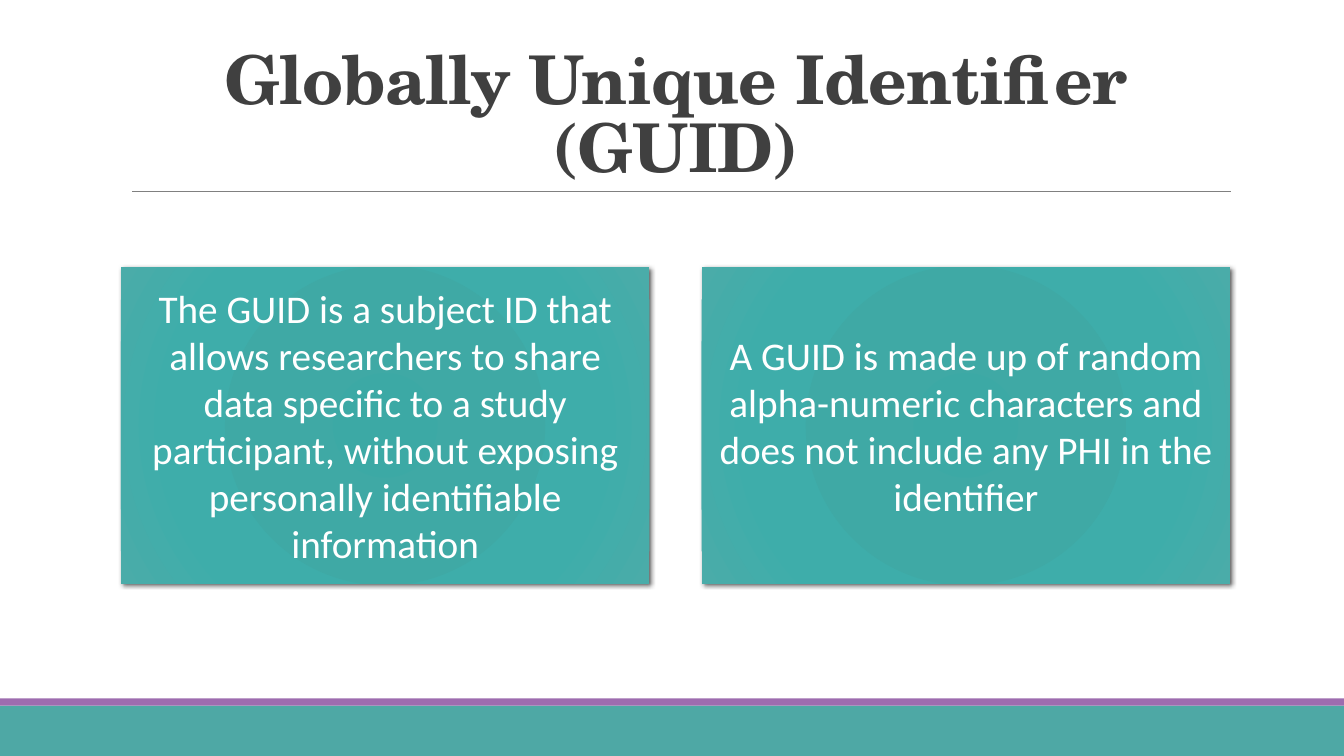
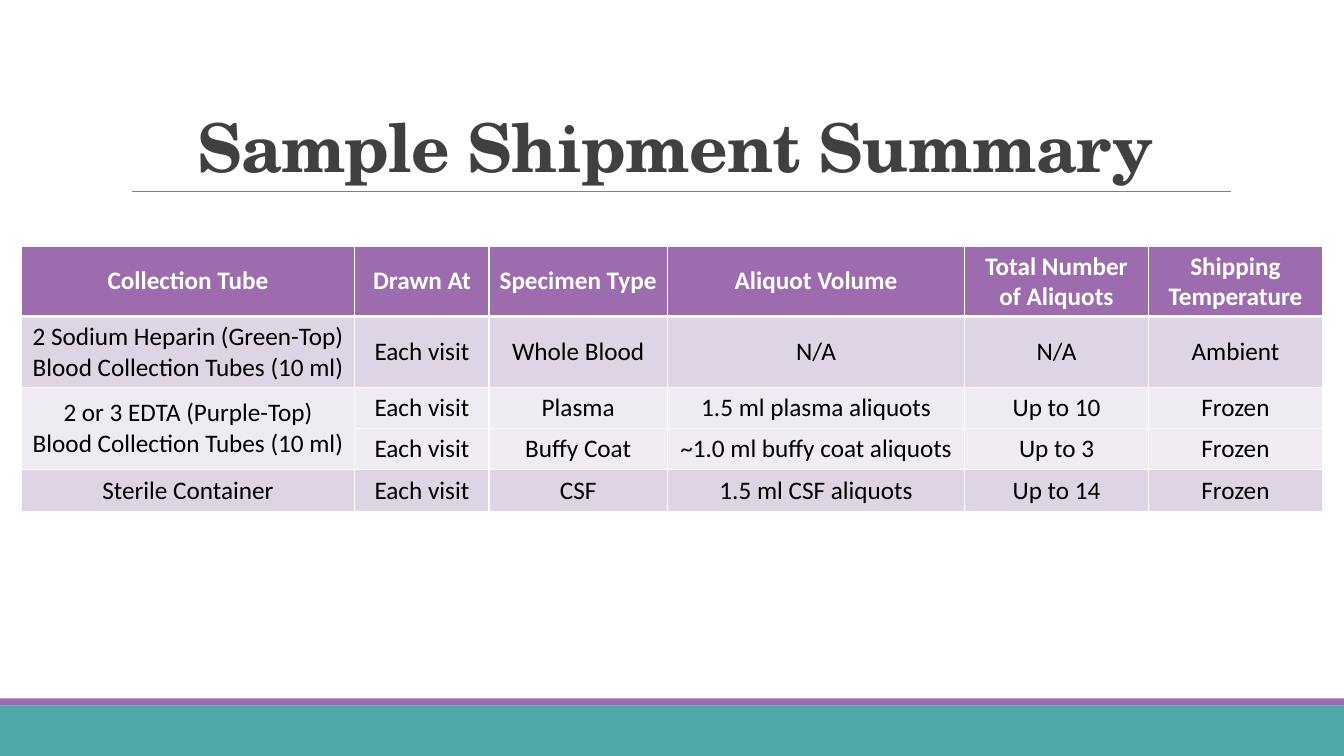
from dataclasses import dataclass
from typing import NamedTuple

from lxml.etree import SubElement
from pptx import Presentation
from pptx.dml.color import RGBColor
from pptx.enum.shapes import MSO_CONNECTOR, MSO_SHAPE
from pptx.enum.text import MSO_ANCHOR, PP_ALIGN
from pptx.oxml import parse_xml
from pptx.oxml.ns import nsdecls, qn
from pptx.shapes.autoshape import Shape
from pptx.slide import Slide
from pptx.table import _Cell as Cell
from pptx.text.text import TextFrame
from pptx.util import Inches, Pt


class TextStyle(NamedTuple):
    font: str
    size: float
    color: str
    bold: bool = False
    tracking: float = 0
    line_spacing: float = 1.0


@dataclass(frozen=True)
class Theme:
    teal: str = "4EA8A5"
    purple: str = "9D6CAF"
    white: str = "FFFFFF"
    rule: str = "808080"
    row_dark: str = "DFD4E3"
    row_light: str = "EFEBF2"
    row_pale: str = "F1EBF4"
    shadow: str = "000000"
    card_stops: tuple[tuple[int, str], ...] = (
        (0, "3CA9A5"), (34, "3FA9A5"), (70, "3EADAA"), (100, "4AACA9"))
    title: TextStyle = TextStyle("TeX Gyre Schola", 48, "404040", True, -0.5, 0.85)
    card: TextStyle = TextStyle("Calibri", 28, "FFFFFF")
    header: TextStyle = TextStyle("Calibri", 18, "FFFFFF", True)
    body: TextStyle = TextStyle("Calibri", 18, "000000")


THEME = Theme()
SLIDE_WIDTH, SLIDE_HEIGHT = 13.33, 7.5


class Box(NamedTuple):
    left: float
    top: float
    width: float
    height: float

    def lengths(self) -> tuple[Inches, ...]:
        return tuple(Inches(value) for value in self)


class TableRow(NamedTuple):
    height: float
    fill: str
    texts: tuple[str, ...]


TITLE_BOX = Box(1.2, 0.31, 11, 1.59)
BANDS = (
    (Box(0, 7, SLIDE_WIDTH, 0.5), THEME.teal),
    (Box(0, 6.93, SLIDE_WIDTH, 0.07), THEME.purple),
)

CARD_TEXTS = (
    "The GUID is a subject ID that allows researchers to share data specific to a "
    "study participant, without exposing personally identifiable information",
    "A GUID is made up of random alpha-numeric characters and does not include any "
    "PHI in the identifier",
)
FIRST_CARD = Box(1.2, 2.65, 5.24, 3.14)
CARD_GAP = 0.52
CARD_INSET = 0.12

TABLE_LEFT, TABLE_TOP = 0.21, 2.44
COLUMN_WIDTHS = (3.31, 1.33, 1.77, 2.95, 1.82, 1.73)
TALL, SHORT = 0.7, 0.41
TABLE_ROWS = (
    TableRow(TALL, THEME.purple, (
        "Collection Tube", "Drawn At", "Specimen Type", "Aliquot Volume",
        "Total Number of Aliquots", "Shipping Temperature")),
    TableRow(TALL, THEME.row_dark, (
        "2 Sodium Heparin (Green-Top) Blood Collection Tubes (10 ml)",
        "Each visit", "Whole Blood", "N/A", "N/A", "Ambient")),
    TableRow(SHORT, THEME.row_light, (
        "2 or 3 EDTA (Purple-Top) Blood Collection Tubes (10 ml)",
        "Each visit", "Plasma", "1.5 ml plasma aliquots", "Up to 10", "Frozen")),
    TableRow(SHORT, THEME.row_pale, (
        "", "Each visit", "Buffy Coat", "~1.0 ml buffy coat aliquots", "Up to 3", "Frozen")),
    TableRow(SHORT, THEME.row_dark, (
        "Sterile Container", "Each visit", "CSF", "1.5 ml CSF aliquots", "Up to 14", "Frozen")),
)


def write_text(frame: TextFrame, text: str, style: TextStyle) -> None:
    frame.word_wrap = True
    paragraph = frame.paragraphs[0]
    paragraph.alignment = PP_ALIGN.CENTER
    paragraph.line_spacing = style.line_spacing
    run = paragraph.add_run()
    run.text = text
    run.font.name = style.font
    run.font.size = Pt(style.size)
    run.font.bold = style.bold
    run.font.color.rgb = RGBColor.from_string(style.color)
    if style.tracking:
        run._r.get_or_add_rPr().set("spc", str(round(style.tracking * 100)))


def add_rectangle(slide: Slide, box: Box) -> Shape:
    shape = slide.shapes.add_shape(MSO_SHAPE.RECTANGLE, *box.lengths())
    shape.shadow.inherit = False
    shape.line.fill.background()
    return shape


def add_base_slide(presentation: Presentation, title: str) -> Slide:
    """Add a slide with the shared bands, rule and title."""
    slide = presentation.slides.add_slide(presentation.slide_layouts[6])
    for box, color in BANDS:
        band = add_rectangle(slide, box)
        band.fill.solid()
        band.fill.fore_color.rgb = RGBColor.from_string(color)

    rule = slide.shapes.add_connector(
        MSO_CONNECTOR.STRAIGHT, Inches(1.31), Inches(1.9), Inches(12.21), Inches(1.9))
    rule.line.color.rgb = RGBColor.from_string(THEME.rule)
    rule.line.width = Pt(0.5)
    SubElement(rule._element.spPr, qn("a:effectLst"))

    frame = slide.shapes.add_textbox(*TITLE_BOX.lengths()).text_frame
    frame.vertical_anchor = MSO_ANCHOR.BOTTOM
    write_text(frame, title, THEME.title)
    return slide


def apply_card_finish(shape: Shape) -> None:
    """Give a shape the circular gradient and the soft shadow of a card."""
    stops = "".join(
        f'<a:gs pos="{position * 1000}"><a:srgbClr val="{color}"/></a:gs>'
        for position, color in THEME.card_stops)
    gradient = parse_xml(
        f'<a:gradFill {nsdecls("a")} rotWithShape="1"><a:gsLst>{stops}</a:gsLst>'
        '<a:path path="circle"><a:fillToRect l="100000" t="100000" r="100000" b="100000"/>'
        '</a:path></a:gradFill>')
    shadow = parse_xml(
        f'<a:outerShdw {nsdecls("a")} blurRad="{Pt(3)}" dist="{Pt(2)}" dir="2700000" '
        f'rotWithShape="0"><a:srgbClr val="{THEME.shadow}"><a:alpha val="60000"/>'
        '</a:srgbClr></a:outerShdw>')
    properties = shape._element.spPr
    properties.find(qn("a:prstGeom")).addnext(gradient)
    properties.find(qn("a:effectLst")).append(shadow)


def add_card(slide: Slide, box: Box, text: str) -> None:
    card = add_rectangle(slide, box)
    apply_card_finish(card)
    frame = card.text_frame
    frame.margin_left = frame.margin_right = Inches(CARD_INSET)
    frame.margin_top = frame.margin_bottom = Inches(CARD_INSET)
    frame.vertical_anchor = MSO_ANCHOR.MIDDLE
    write_text(frame, text, THEME.card)


def set_borders(cell: Cell, top: float, bottom: float) -> None:
    properties = cell._tc.get_or_add_tcPr()
    for side, width in (("L", 1), ("R", 1), ("T", top), ("B", bottom)):
        properties.append(parse_xml(
            f'<a:ln{side} {nsdecls("a")} w="{Pt(width)}"><a:solidFill>'
            f'<a:srgbClr val="{THEME.white}"/></a:solidFill></a:ln{side}>'))


def add_shipment_table(slide: Slide) -> None:
    box = Box(TABLE_LEFT, TABLE_TOP, sum(COLUMN_WIDTHS), sum(row.height for row in TABLE_ROWS))
    table = slide.shapes.add_table(
        len(TABLE_ROWS), len(COLUMN_WIDTHS), *box.lengths()).table
    table.horz_banding = False
    for column, width in zip(table.columns, COLUMN_WIDTHS):
        column.width = Inches(width)
    for row_index, row in enumerate(TABLE_ROWS):
        table.rows[row_index].height = Inches(row.height)
        style = THEME.body if row_index else THEME.header
        for column_index, text in enumerate(row.texts):
            cell = table.cell(row_index, column_index)
            set_borders(cell, top=3 if row_index == 1 else 1, bottom=1 if row_index else 3)
            cell.fill.solid()
            cell.fill.fore_color.rgb = RGBColor.from_string(row.fill)
            cell.vertical_anchor = MSO_ANCHOR.MIDDLE
            if text:
                write_text(cell.text_frame, text, style)
    table.cell(2, 0).merge(table.cell(3, 0))


def main() -> None:
    presentation = Presentation()
    presentation.slide_width = Inches(SLIDE_WIDTH)
    presentation.slide_height = Inches(SLIDE_HEIGHT)

    guid_slide = add_base_slide(presentation, "Globally Unique Identifier (GUID)")
    for index, text in enumerate(CARD_TEXTS):
        left = FIRST_CARD.left + index * (FIRST_CARD.width + CARD_GAP)
        add_card(guid_slide, FIRST_CARD._replace(left=left), text)

    shipment_slide = add_base_slide(presentation, "Sample Shipment Summary")
    add_shipment_table(shipment_slide)

    presentation.save("out.pptx")


if __name__ == "__main__":
    main()
